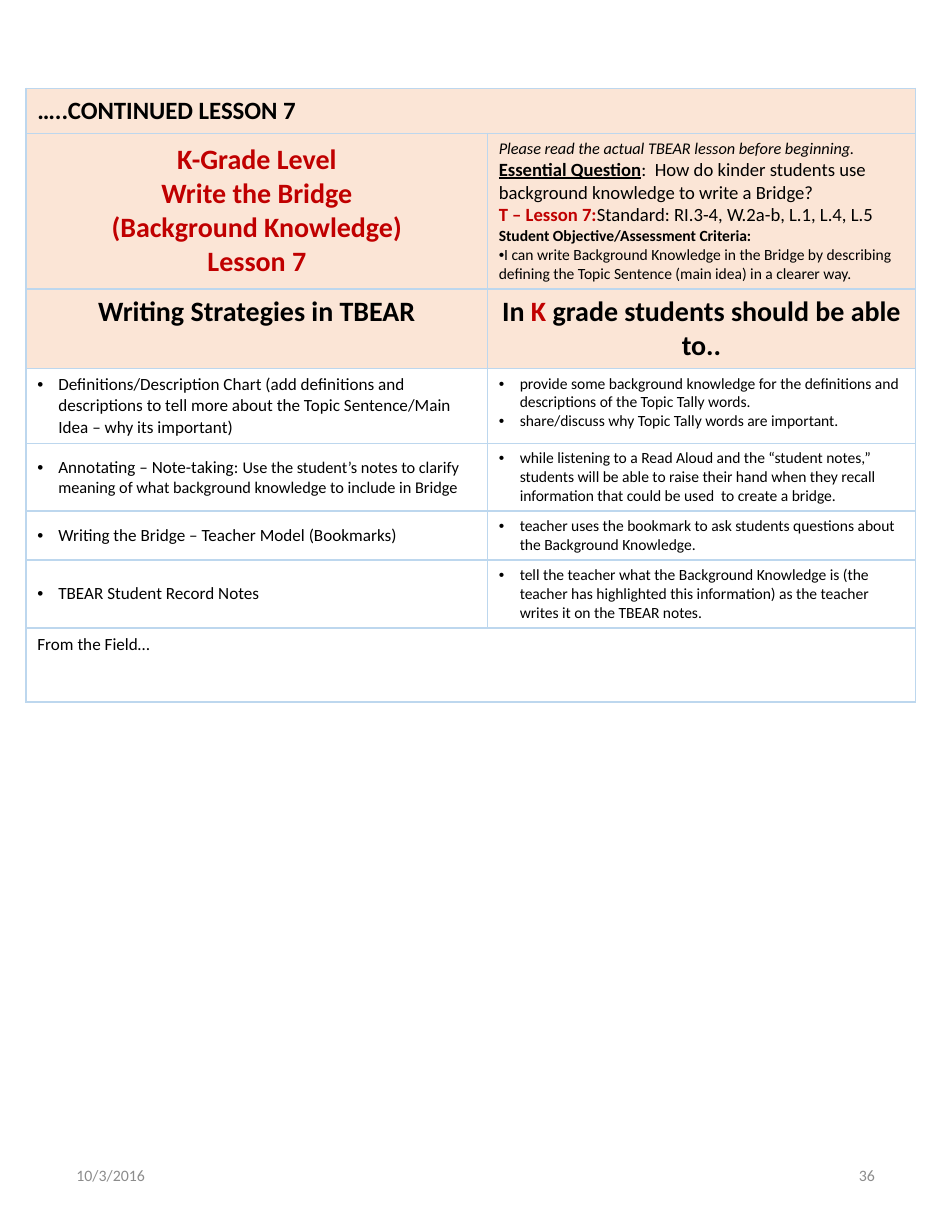
from lxml import etree
from pptx import Presentation
from pptx.dml.color import RGBColor
from pptx.enum.text import MSO_ANCHOR, PP_ALIGN
from pptx.oxml.ns import qn
from pptx.util import Pt

LEFT, CENTER, RIGHT = PP_ALIGN.LEFT, PP_ALIGN.CENTER, PP_ALIGN.RIGHT
TOP, MIDDLE = MSO_ANCHOR.TOP, MSO_ANCHOR.MIDDLE
BLACK = RGBColor(0x00, 0x00, 0x00)
RED = RGBColor(0xC0, 0x00, 0x00)
GRAY = RGBColor(0x8C, 0x8C, 0x8C)
PEACH = RGBColor(0xFB, 0xE5, 0xD6)
WHITE = RGBColor(0xFF, 0xFF, 0xFF)
BLUE = RGBColor(0xBD, 0xD7, 0xEE)
FONT = "Calibri"
INDENT = 13.5

COLUMN_SHARES = (4.12, 3.82)
ROW_HEIGHTS = (28.8, 28.8, 28.8, 28.8, 38.2, 28.8, 28.8, 47.6)

TITLE = ("K-Grade Level", "Write the Bridge", "(Background Knowledge)", "Lesson 7")
STRATEGIES = [
    ([("Definitions/Description Chart (add definitions and descriptions to tell more "
       "about the Topic Sentence/Main Idea – why its important)", {})],
     ["provide some background knowledge for the definitions and descriptions of the "
      "Topic Tally words.",
      "share/discuss why Topic Tally words are important."]),
    ([("Annotating – Note-taking: ", {}),
      ("Use the student’s notes to clarify meaning of what background knowledge to "
       "include in Bridge", {"size": 10.5})],
     ["while listening to a Read Aloud and the “student notes,” students will be able to "
      "raise their hand when they recall information that could be used  to create a bridge."]),
    ([("Writing the Bridge – Teacher Model (Bookmarks)", {})],
     ["teacher uses the bookmark to ask students questions about the Background Knowledge."]),
    ([("TBEAR Student Record Notes", {})],
     ["tell the teacher what the Background Knowledge is (the teacher has highlighted this "
      "information) as the teacher writes it on the TBEAR notes."]),
]


def add_run(p, text, size=11, color=BLACK, bold=False, italic=False, underline=False):
    """Add one formatted run to a paragraph."""
    r = p.add_run()
    r.text = text
    f = r.font
    f.name, f.size, f.bold, f.italic, f.underline = FONT, Pt(size), bold, italic, underline
    f.color.rgb = color


def add_bullet(p, indent):
    """Give a paragraph a black round bullet with a hanging indent."""
    pPr = p._p.get_or_add_pPr()
    pPr.set("marL", str(Pt(indent)))
    pPr.set("indent", str(-Pt(indent)))
    clr = etree.SubElement(pPr, qn("a:buClr"))
    etree.SubElement(clr, qn("a:srgbClr"), val=str(BLACK))
    etree.SubElement(pPr, qn("a:buFont"), typeface="Arial")
    etree.SubElement(pPr, qn("a:buChar"), char="•")


def write(tf, paragraphs, align=LEFT, bullet=None, **fmt):
    """Write paragraphs, each a string or a list of (text, format) runs."""
    for i, runs in enumerate(paragraphs):
        p = tf.paragraphs[0] if i == 0 else tf.add_paragraph()
        p.alignment = align
        if bullet is not None:
            add_bullet(p, bullet)
        for text, own in [(runs, {})] if isinstance(runs, str) else runs:
            add_run(p, text, **{**fmt, **own})


def style_cell(cell, fill):
    """Set the borders and the fill of a table cell."""
    tcPr = cell._tc.get_or_add_tcPr()
    for side in ("lnL", "lnR", "lnT", "lnB"):
        ln = etree.SubElement(tcPr, qn(f"a:{side}"), w=str(Pt(1)))
        solid = etree.SubElement(ln, qn("a:solidFill"))
        etree.SubElement(solid, qn("a:srgbClr"), val=str(BLUE))
    cell.fill.solid()
    cell.fill.fore_color.rgb = fill


def fill_heading(table):
    """Fill the three shaded heading rows."""
    write(table.cell(0, 0).text_frame, ["…..CONTINUED LESSON 7"], size=16, bold=True)
    write(table.cell(1, 0).text_frame, TITLE, align=CENTER, size=18, bold=True, color=RED)
    tf = table.cell(1, 1).text_frame
    write(tf, [
        [("Please read the actual TBEAR lesson before beginning.",
          {"size": 10.5, "italic": True})],
        [("Essential Question", {"bold": True, "underline": True}),
         (":  How do kinder students use background knowledge to write a Bridge?", {})],
        [("T – Lesson 7:", {"bold": True, "color": RED}),
         ("Standard: RI.3-4, W.2a-b, L.1, L.4, L.5", {})],
        [("Student Objective/Assessment Criteria:", {"size": 10, "bold": True})],
        [("I can write Background Knowledge in the Bridge by describing defining the Topic "
          "Sentence (main idea) in a clearer way.", {"size": 10})],
    ], size=12)
    add_bullet(tf.paragraphs[-1], 0)
    heads = (["Writing Strategies in TBEAR"],
             [[("In ", {}), ("K", {"color": RED}),
               (" grade students should be able to..", {})]])
    for col, head in enumerate(heads):
        write(table.cell(2, col).text_frame, head, align=CENTER, size=18, bold=True)


def fill_strategies(table):
    """Fill the strategy rows and the closing row."""
    for row, (strategy, skills) in enumerate(STRATEGIES, start=3):
        write(table.cell(row, 0).text_frame, [strategy], bullet=INDENT)
        write(table.cell(row, 1).text_frame, skills, bullet=INDENT, size=10)
    write(table.cell(7, 0).text_frame, ["From the Field…"])


def lesson_table(slide, x, y, w, h):
    """Build the lesson table in the given box."""
    frame = slide.shapes.add_table(len(ROW_HEIGHTS), 2, Pt(x), Pt(y), Pt(w), Pt(h))
    table = frame.table
    for col, share in zip(table.columns, COLUMN_SHARES):
        col.width = Pt(w * share / sum(COLUMN_SHARES))
    for i, (row, height) in enumerate(zip(table.rows, ROW_HEIGHTS)):
        row.height = Pt(height)
        for j, cell in enumerate(row.cells):
            style_cell(cell, PEACH if i < 3 else WHITE)
            middle = i < 2 or (j == 0 and 3 <= i <= 6)
            cell.vertical_anchor = MIDDLE if middle else TOP
    for i in (0, len(ROW_HEIGHTS) - 1):
        table.cell(i, 0).merge(table.cell(i, 1))
    fill_heading(table)
    fill_strategies(table)
    frame.height = Pt(h)


def footer(slide, x, y, w, h):
    """Place the date and the page number at the two ends of the given box."""
    box_w = 137.5
    for left, text, align in ((x, "10/3/2016", LEFT), (x + w - box_w, "36", RIGHT)):
        s = slide.shapes.add_textbox(Pt(left), Pt(y), Pt(box_w), Pt(h))
        tf = s.text_frame
        tf.word_wrap = True
        tf.vertical_anchor = MIDDLE
        write(tf, [text], align=align, size=10.2, color=GRAY)


def main():
    """Build the lesson slide and save it."""
    prs = Presentation()
    prs.slide_width, prs.slide_height = Pt(612), Pt(792)
    slide = prs.slides.add_slide(prs.slide_layouts[6])
    lesson_table(slide, 16.8, 56.8, 571.7, 368.6)
    footer(slide, 42, 734.3, 527.5, 42.2)
    prs.save("out.pptx")


if __name__ == "__main__":
    main()
